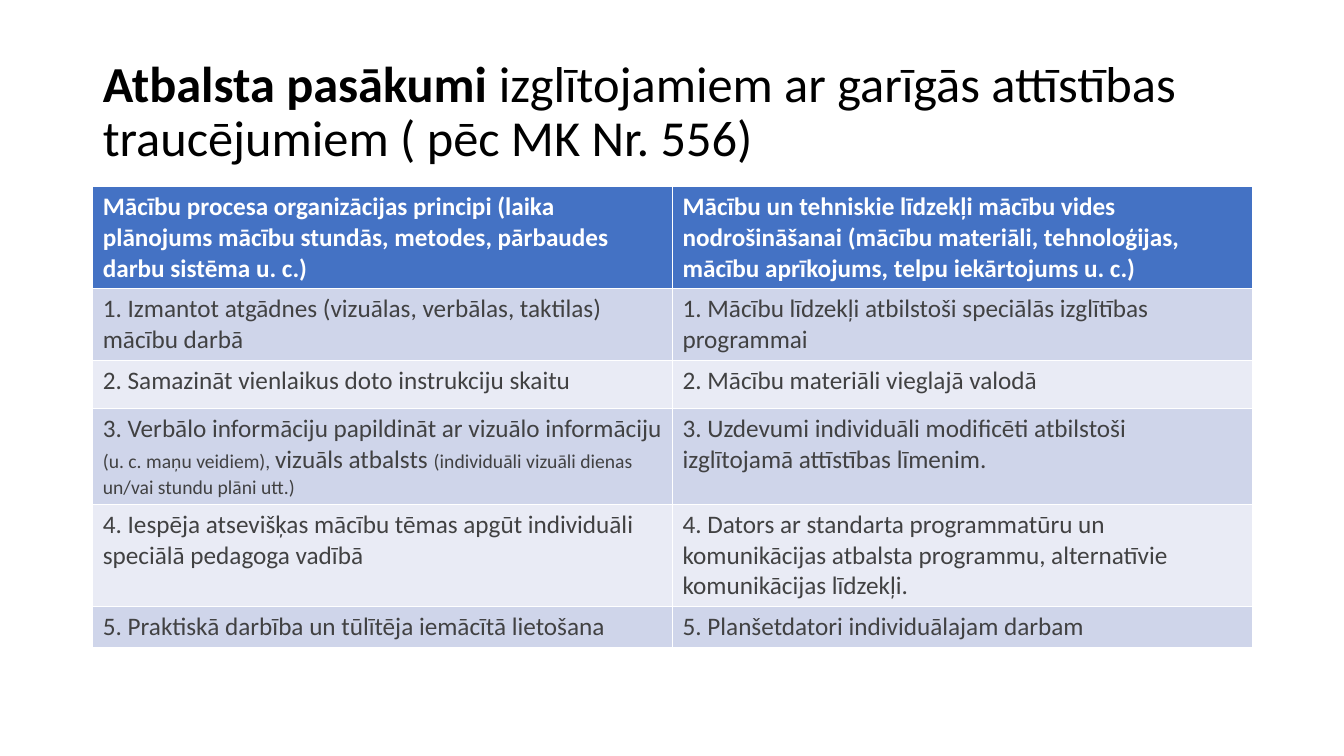
from pptx import Presentation
from pptx.dml.color import RGBColor
from pptx.enum.text import MSO_ANCHOR, MSO_AUTO_SIZE, PP_ALIGN
from pptx.util import Inches, Pt

FONT = "Calibri"
BLACK = RGBColor(0x00, 0x00, 0x00)
WHITE = RGBColor(0xFF, 0xFF, 0xFF)
GREY = RGBColor(0x41, 0x41, 0x42)
BLUE = RGBColor(0x44, 0x72, 0xC4)
BANDS = [RGBColor(0xE9, 0xEB, 0xF5), RGBColor(0xCF, 0xD5, 0xEA)]

LEFT, WIDTH = Inches(0.92), Inches(11.5)
ROW_HEIGHTS = [0.95, 0.71, 0.48, 0.84, 0.96, 0.41]

# Each cell is a text, or a list of (text, size) runs
ROWS = [
    ("Mācību procesa organizācijas principi (laika plānojums mācību stundās, "
     "metodes, pārbaudes darbu sistēma u. c.)",
     "Mācību un tehniskie līdzekļi mācību vides nodrošināšanai (mācību materiāli, "
     "tehnoloģijas, mācību aprīkojums, telpu iekārtojums u. c.)"),
    ("1. Izmantot atgādnes (vizuālas, verbālas, taktilas) mācību darbā",
     "1. Mācību līdzekļi atbilstoši speciālās izglītības programmai"),
    ("2. Samazināt vienlaikus doto instrukciju skaitu",
     "2. Mācību materiāli vieglajā valodā"),
    ([("3. Verbālo informāciju papildināt ar vizuālo informāciju ", 18),
      ("(u. c. maņu veidiem), ", 14),
      ("vizuāls atbalsts ", 18),
      ("(individuāli vizuāli dienas un/vai stundu plāni utt.)", 14)],
     "3. Uzdevumi individuāli modificēti atbilstoši izglītojamā attīstības līmenim."),
    ("4. Iespēja atsevišķas mācību tēmas apgūt individuāli speciālā pedagoga vadībā",
     "4. Dators ar standarta programmatūru un komunikācijas atbalsta programmu, "
     "alternatīvie komunikācijas līdzekļi."),
    ("5. Praktiskā darbība un tūlītēja iemācītā lietošana",
     "5. Planšetdatori individuālajam darbam"),
]


def add_title(s):
    title = s.shapes.title
    title.left, title.top = LEFT, Inches(0.4)
    title.width, title.height = WIDTH, Inches(1.45)
    tf = title.text_frame
    tf.auto_size = MSO_AUTO_SIZE.NONE
    tf.word_wrap = True
    tf.vertical_anchor = MSO_ANCHOR.MIDDLE
    p = tf.paragraphs[0]
    p.alignment = PP_ALIGN.LEFT
    p.line_spacing = 0.9
    p.font.name, p.font.size = FONT, Pt(36)
    p.font.color.rgb = BLACK
    for text, bold in [
        ("Atbalsta pasākumi ", True),
        ("izglītojamiem ar garīgās attīstības traucējumiem ( pēc MK Nr. 556)", False),
    ]:
        r = p.add_run()
        r.text = text
        r.font.bold = bold


def fill_cell(cell, content, fill, color, bold):
    cell.fill.solid()
    cell.fill.fore_color.rgb = fill
    p = cell.text_frame.paragraphs[0]
    p.font.name, p.font.size, p.font.bold = FONT, Pt(18), bold
    p.font.color.rgb = color
    runs = [(content, 18)] if isinstance(content, str) else content
    for text, size in runs:
        r = p.add_run()
        r.text = text
        if size != 18:
            r.font.size = Pt(size)


def add_measures_table(s):
    frame = s.shapes.add_table(len(ROWS), 2, LEFT, Inches(1.85),
                               WIDTH, Inches(sum(ROW_HEIGHTS)))
    table = frame.table
    for i, (row, height) in enumerate(zip(ROWS, ROW_HEIGHTS)):
        table.rows[i].height = Inches(height)
        header = i == 0
        fill = BLUE if header else BANDS[i % 2]
        for j, content in enumerate(row):
            fill_cell(table.cell(i, j), content, fill,
                      WHITE if header else GREY, header)


def main():
    prs = Presentation()
    prs.slide_width, prs.slide_height = Inches(13.33), Inches(7.5)
    s = prs.slides.add_slide(prs.slide_layouts[5])  # title only
    add_title(s)
    add_measures_table(s)
    prs.save("out.pptx")


if __name__ == "__main__":
    main()
